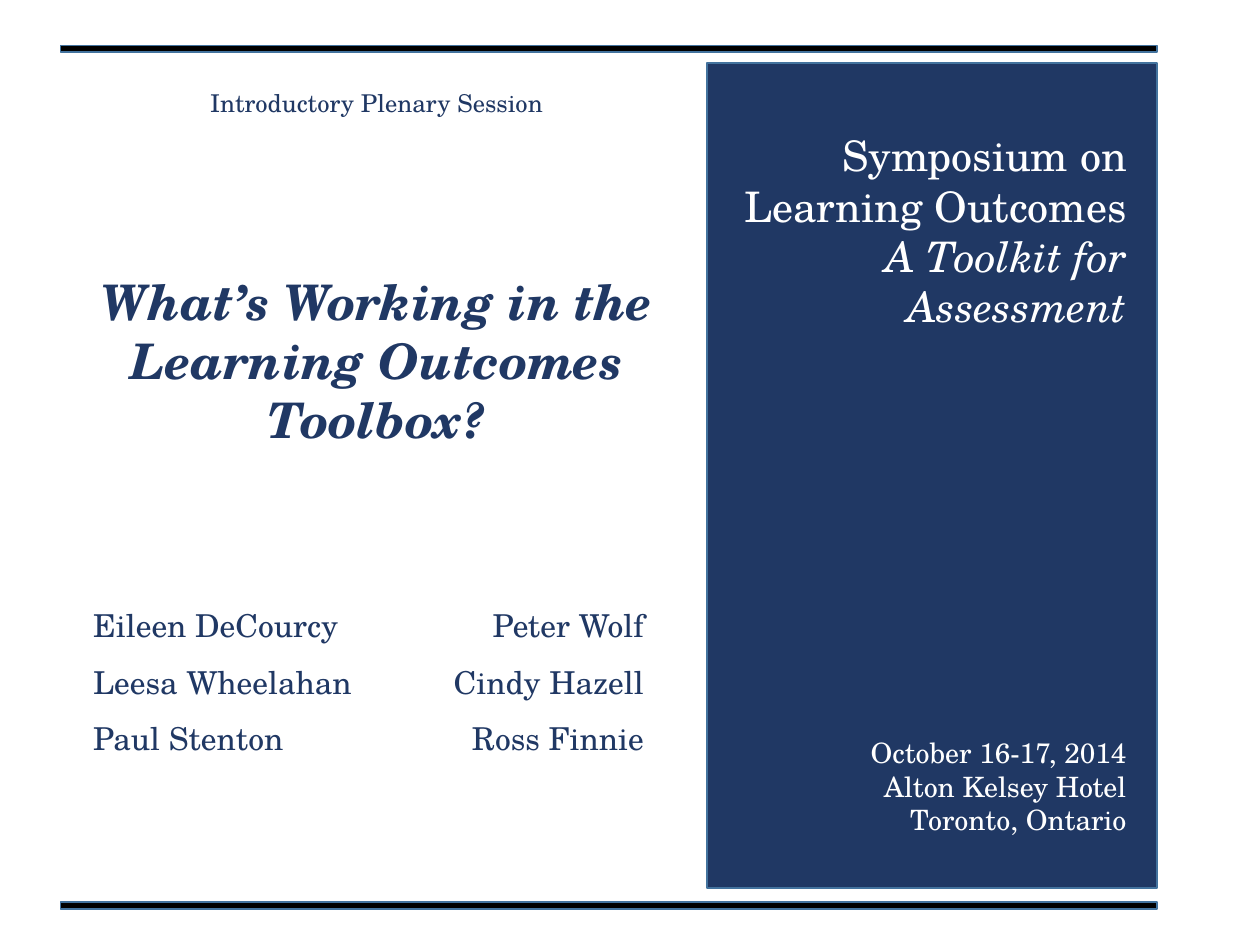
from pptx import Presentation
from pptx.dml.color import RGBColor
from pptx.enum.shapes import MSO_SHAPE
from pptx.enum.text import MSO_AUTO_SIZE, PP_ALIGN
from pptx.util import Cm, Pt

RECT = MSO_SHAPE.RECTANGLE
GROW = MSO_AUTO_SIZE.SHAPE_TO_FIT_TEXT
LEFT, CENTER, RIGHT = PP_ALIGN.LEFT, PP_ALIGN.CENTER, PP_ALIGN.RIGHT
FONT = "TeX Gyre Schola"
COLORS = {"navy": "203864", "edge": "43739E", "black": "000000", "white": "FFFFFF"}


def color(name):
    """Return the named colour."""
    return RGBColor.from_string(COLORS[name])


def add_rect(s, box, fill):
    """Add an edged rectangle; box is left, top, width, height in cm."""
    sp = s.shapes.add_shape(RECT, *map(Cm, box))
    sp.shadow.inherit = False
    sp.fill.solid()
    sp.fill.fore_color.rgb = color(fill)
    sp.line.color.rgb = color("edge")
    sp.line.width = Pt(1)


def add_text(s, box, paragraphs, ink):
    """Add a text box from (text, font format, paragraph format) entries."""
    tf = s.shapes.add_textbox(*map(Cm, box)).text_frame
    tf.word_wrap = True
    tf.auto_size = GROW
    for i, (text, font, layout) in enumerate(paragraphs):
        p = tf.add_paragraph() if i else tf.paragraphs[0]
        for name, value in layout.items():
            setattr(p, name, value)
        r = p.add_run()
        r.text = text
        r.font.color.rgb = color(ink)
        for name, value in {"name": FONT, **font}.items():
            setattr(r.font, name, value)


def add_rules(s, box):
    """Draw the black bars along the top and bottom of the box."""
    x, y, w, h = box
    bar = 0.13
    for top in (y, y + h - bar):
        add_rect(s, (x, top, w, bar), "black")


def add_event_panel(s, box):
    """Draw the navy panel with the event title, date and place."""
    x, y, w, h = box
    add_rect(s, box, "navy")
    title, details = {"size": Pt(24)}, {"size": Pt(16)}
    right = {"alignment": RIGHT}
    add_text(s, (x + 0.36, y + 1.22, w - 0.72, h - 2), [
        ("Symposium on Learning Outcomes", title, right),
        ("A Toolkit for Assessment", {**title, "italic": True}, right),
        ("October 16-17, 2014", details, {**right, "space_before": Pt(231)}),
        ("Alton Kelsey Hotel", details, right),
        ("Toronto, Ontario", details, right),
    ], "white")


def add_session(s, box):
    """Write the session label and its title."""
    add_text(s, box, [
        ("Introductory Plenary Session", {"size": Pt(14)}, {"alignment": CENTER}),
        ("What’s Working in the Learning Outcomes Toolbox?",
         {"size": Pt(28), "bold": True, "italic": True},
         {"alignment": CENTER, "space_before": Pt(88)}),
    ], "navy")


def add_speakers(s, box):
    """Write the speakers in two columns, set to the outer edges of the box."""
    x, y, w, h = box
    columns = [
        (LEFT, ("Eileen DeCourcy", "Leesa Wheelahan", "Paul Stenton")),
        (RIGHT, ("Peter Wolf", "Cindy Hazell", "Ross Finnie")),
    ]
    for i, (align, names) in enumerate(columns):
        layout = {"alignment": align, "line_spacing": 1.5}
        add_text(s, (x + i * w / 2, y, w / 2, h),
                 [(name, {"size": Pt(18)}, layout) for name in names], "navy")


def main():
    """Build and save the title slide."""
    prs = Presentation()
    prs.slide_width, prs.slide_height = Cm(25.4), Cm(19.05)
    s = prs.slides.add_slide(prs.slide_layouts[6])
    add_event_panel(s, (14.25, 1.27, 9.07, 16.64))
    add_rules(s, (1.22, 0.92, 22.1, 17.4))
    add_session(s, (1.22, 1.65, 12.75, 7.52))
    add_speakers(s, (1.63, 11.71, 11.6, 3.71))
    prs.save("out.pptx")


if __name__ == "__main__":
    main()
